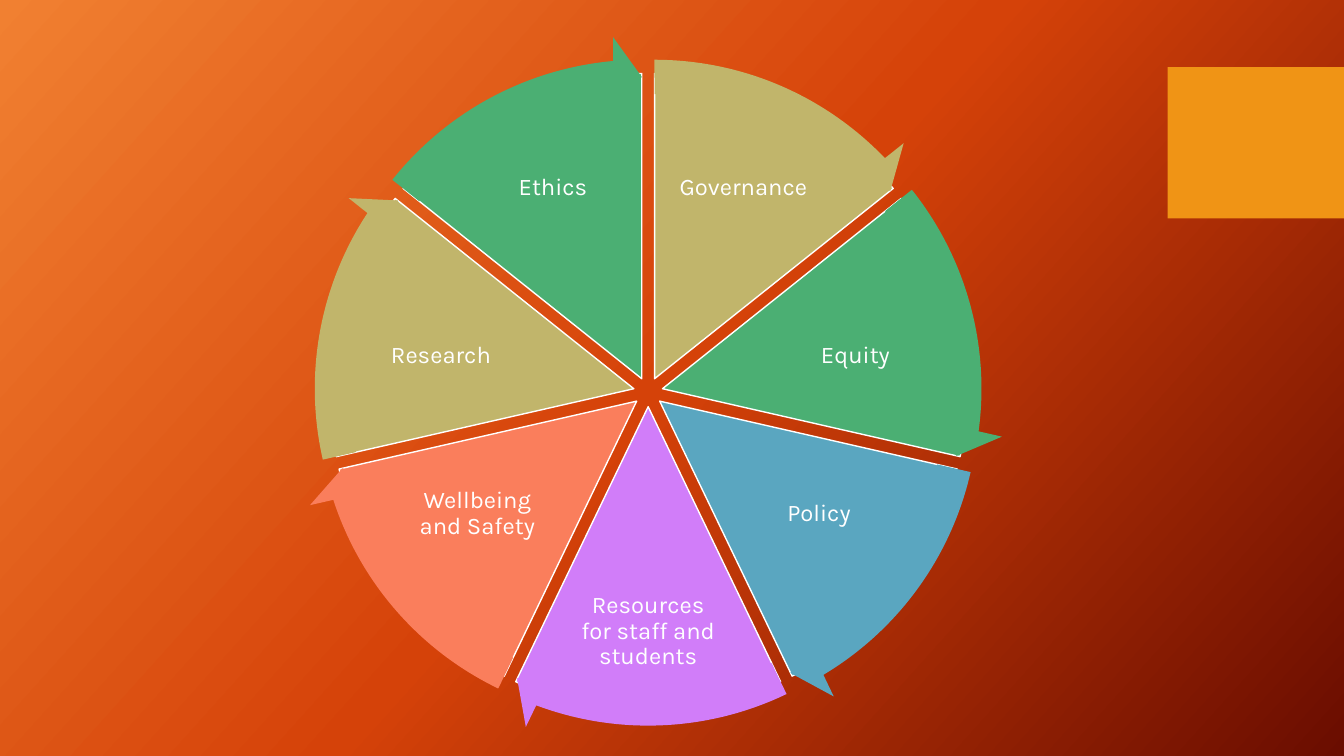
import copy
import math

import pptx
import pptx.dml.color
import pptx.enum.shapes
import pptx.enum.text
import pptx.oxml.ns
import pptx.util

Pt = pptx.util.Pt
RGBColor = pptx.dml.color.RGBColor
SHAPE = pptx.enum.shapes.MSO_SHAPE

WHITE = RGBColor(0xFF, 0xFF, 0xFF)
SAND = RGBColor(0xC1, 0xB5, 0x6B)
GREEN = RGBColor(0x4B, 0xAF, 0x73)
BLUE = RGBColor(0x5A, 0xA6, 0xC0)
PURPLE = RGBColor(0xD1, 0x7D, 0xF9)
CORAL = RGBColor(0xFA, 0x7E, 0x5C)
AMBER = RGBColor(0xF0, 0x94, 0x15)
BACKDROP = [
    (0, RGBColor(0xF1, 0x80, 0x31)),
    (0.5, RGBColor(0xD5, 0x42, 0x09)),
    (1, RGBColor(0x6A, 0x0D, 0x00)),
]

# label, colour, label centre (x from hub, y on slide), label size
THEMES = [
    ("Governance", SAND, (68, 134), (104, 83)),
    ("Equity", GREEN, (148, 254), (120, 73)),
    ("Policy", BLUE, (122, 367), (104, 81)),
    ("Resources for staff and students", PURPLE, (0, 451), (102, 73)),
    ("Wellbeing and Safety", CORAL, (-122, 367), (104, 81)),
    ("Research", SAND, (-148, 254), (120, 73)),
    ("Ethics", GREEN, (-68, 134), (104, 83)),
]

HUB_X, HUB_Y = 463, 280
SPREAD = 10.5
WEDGE_SIZE, ARROW_SIZE = 436, 490
FULL_TURN = 216
TOP = 162
STEP = FULL_TURN / len(THEMES)
ARROW_BAND, ARROW_TIP, ARROW_HEAD = 0.05, 3.28, 0.06


def add_filled(slide, kind, center, size, colour, adjustments=()):
    (x, y), (width, height) = center, size
    shape = slide.shapes.add_shape(
        kind, Pt(x - width / 2), Pt(y - height / 2), Pt(width), Pt(height))
    shape.shadow.inherit = False
    shape.fill.solid()
    shape.fill.fore_color.rgb = colour
    shape.line.fill.background()
    for index, value in enumerate(adjustments):
        shape.adjustments[index] = value
    return shape


def add_label(slide, text, offset, size):
    (dx, y), (width, height) = offset, size
    label = slide.shapes.add_textbox(
        Pt(HUB_X + dx - width / 2), Pt(y - height / 2), Pt(width), Pt(height))
    frame = label.text_frame
    frame.word_wrap = True
    frame.vertical_anchor = pptx.enum.text.MSO_ANCHOR.MIDDLE
    frame.margin_left = frame.margin_right = Pt(1.5)
    frame.margin_top = frame.margin_bottom = Pt(1.5)
    paragraph = frame.paragraphs[0]
    paragraph.text = text
    paragraph.alignment = pptx.enum.text.PP_ALIGN.CENTER
    paragraph.line_spacing = 0.9
    paragraph.font.name = "Karla"
    paragraph.font.size = Pt(17)
    paragraph.font.color.rgb = WHITE


def paint_backdrop(slide):
    fill = slide.background.fill
    fill.gradient()
    stop_list = slide.element.find(".//" + pptx.oxml.ns.qn("a:gsLst"))
    stop_list.append(copy.deepcopy(stop_list[0]))
    for stop, (position, colour) in zip(fill.gradient_stops, BACKDROP):
        stop.position = position
        stop.color.rgb = colour
    fill.gradient_angle = 360 - 42


def wedge_place(index):
    start = (TOP + index * STEP) % FULL_TURN
    end = (start + STEP) % FULL_TURN
    middle = math.tau * (start + STEP / 2) / FULL_TURN
    center = (HUB_X + SPREAD * math.cos(middle), HUB_Y + SPREAD * math.sin(middle))
    return center, start, end


def main():
    deck = pptx.Presentation()
    deck.slide_width, deck.slide_height = Pt(960), Pt(540)
    slide = deck.slides.add_slide(deck.slide_layouts[6])
    paint_backdrop(slide)
    add_filled(slide, SHAPE.RECTANGLE, (897, 102), (126, 108), AMBER)

    for index, (text, colour, offset, size) in enumerate(THEMES):
        center, start, end = wedge_place(index)
        wedge = add_filled(
            slide, SHAPE.PIE, center, (WEDGE_SIZE, WEDGE_SIZE), colour, (start, end))
        wedge.line.color.rgb = WHITE
        wedge.line.width = Pt(1)
        add_label(slide, text, offset, size)

    for index, (_, colour, _, _) in enumerate(THEMES):
        center, start, end = wedge_place(index)
        tip = (end - ARROW_TIP) % FULL_TURN
        add_filled(
            slide, SHAPE.CIRCULAR_ARROW, center, (ARROW_SIZE, ARROW_SIZE), colour,
            (ARROW_BAND, ARROW_TIP, tip, start, ARROW_HEAD))

    deck.save("out.pptx")


if __name__ == "__main__":
    main()
